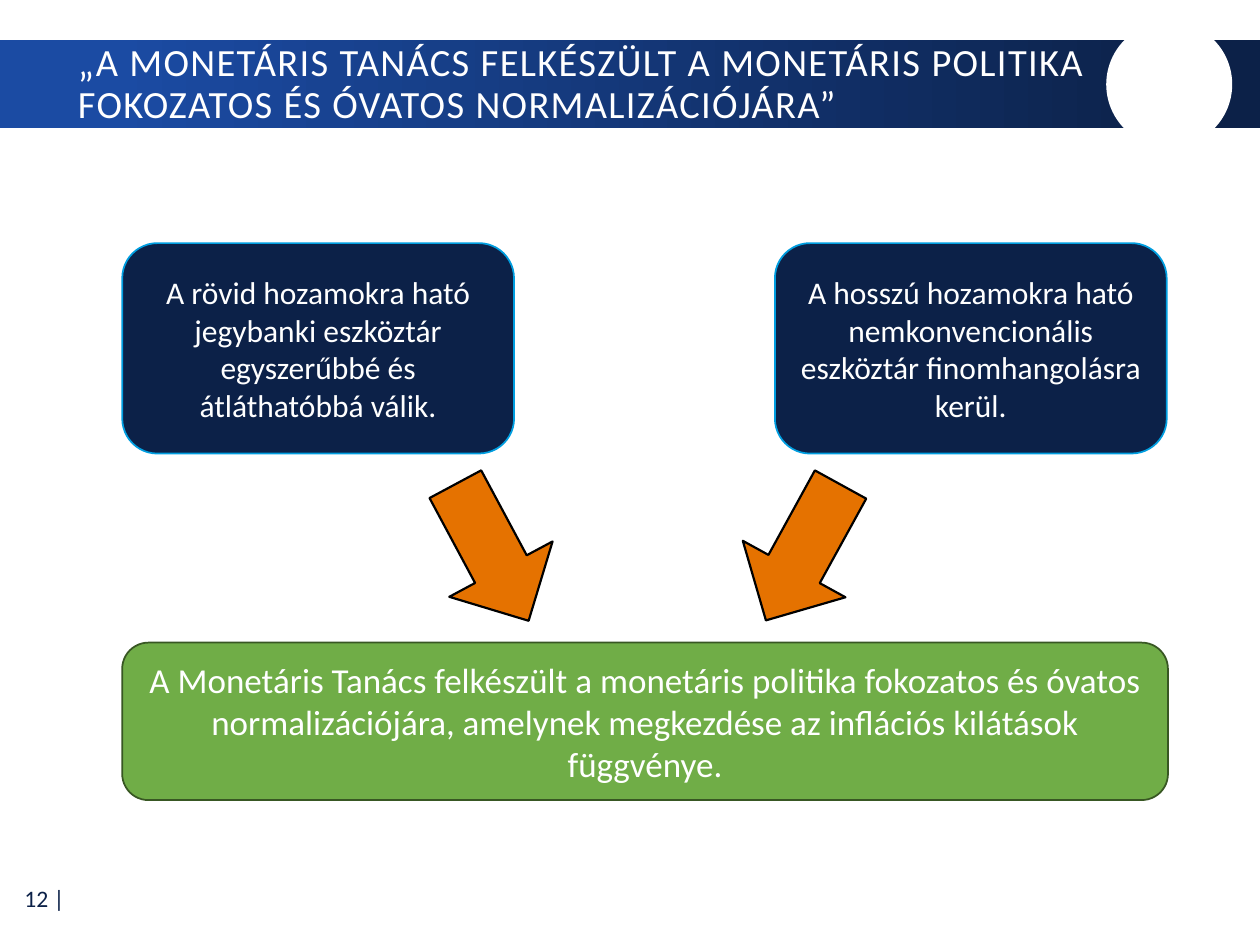
from dataclasses import dataclass

from pptx import Presentation
from pptx.dml.color import RGBColor
from pptx.enum.shapes import MSO_SHAPE
from pptx.enum.text import MSO_ANCHOR, PP_ALIGN
from pptx.util import Inches, Pt


@dataclass(frozen=True)
class Theme:
    font: str = "Calibri"
    white: str = "FFFFFF"
    navy: str = "0C2148"
    blue: str = "1B4BA3"
    cyan: str = "009EE0"
    green: str = "70AD47"
    dark_green: str = "385723"
    orange: str = "E57200"
    black: str = "000000"
    title_size: float = 22
    tool_size: float = 18
    conclusion_size: float = 20
    number_size: float = 13.5


THEME = Theme()

TOOLS = [
    (0.97, "A rövid hozamokra ható jegybanki eszköztár egyszerűbbé és átláthatóbbá válik."),
    (6.15, "A hosszú hozamokra ható nemkonvencionális eszköztár finomhangolásra kerül."),
]
ARROWS = [(3.44, 331.8), (5.91, 28.8)]  # left edge, rotation


def rgb(value):
    return RGBColor.from_string(value)


def set_all(target, values):
    for name, value in values.items():
        setattr(target, name, value)


def write_text(shape, text, size, color, align=PP_ALIGN.LEFT, line_spacing=None):
    frame = shape.text_frame
    set_all(frame, {"word_wrap": True, "vertical_anchor": MSO_ANCHOR.MIDDLE})
    para = frame.paragraphs[0]
    set_all(para, {"alignment": align, "line_spacing": line_spacing})
    span = para.add_run()
    span.text = text
    set_all(span.font, {"name": THEME.font, "size": Pt(size)})
    span.font.color.rgb = rgb(color)
    return span


def add_text(page, place, *args, **formats):
    box = page.shapes.add_textbox(*map(Inches, place))
    return write_text(box, *args, **formats)


def add_shape(page, kind, place, fill=None, line=None, width=1):
    shape = page.shapes.add_shape(kind, *map(Inches, place))
    shape.shadow.inherit = False
    if fill:
        shape.fill.solid()
        shape.fill.fore_color.rgb = rgb(fill)
    if line:
        shape.line.color.rgb = rgb(line)
        shape.line.width = Pt(width)
    else:
        shape.line.fill.background()
    return shape


def add_panel(page, place, text, size, fill, line):
    panel = add_shape(page, MSO_SHAPE.ROUNDED_RECTANGLE, place, fill, line)
    write_text(panel, text, size, THEME.white, PP_ALIGN.CENTER)


def add_header(page):
    band = add_shape(page, MSO_SHAPE.RECTANGLE, (0, 0.32, 10, 0.7))
    band.fill.gradient()
    band.fill.gradient_angle = 0
    stops = [(0.09, THEME.blue), (0.95, THEME.navy)]
    for stop, (position, color) in zip(band.fill.gradient_stops, stops):
        stop.position = position
        stop.color.rgb = rgb(color)
    add_shape(page, MSO_SHAPE.OVAL, (8.78, 0.17, 1, 1), THEME.white)

    title = add_text(
        page, (0.52, 0.34, 8.32, 0.67),
        "„A MONETÁRIS TANÁCS FELKÉSZÜLT A MONETÁRIS POLITIKA "
        "FOKOZATOS ÉS ÓVATOS NORMALIZÁCIÓJÁRA”",
        THEME.title_size, THEME.white, line_spacing=0.9,
    )
    title.font._element.set("spc", "80")  # letter spacing of 0.8 pt


def main():
    deck = Presentation()
    set_all(deck, {"slide_width": Inches(10), "slide_height": Inches(7.5)})
    page = deck.slides.add_slide(deck.slide_layouts[6])

    # Page number and title band
    add_text(page, (0.01, 6.94, 0.6, 0.37), "12 |",
             THEME.number_size, THEME.navy, align=PP_ALIGN.RIGHT)
    add_header(page)

    # Two policy tools
    for left, text in TOOLS:
        add_panel(page, (left, 1.93, 3.11, 1.67), text,
                  THEME.tool_size, THEME.navy, THEME.cyan)

    # Shared conclusion
    add_panel(
        page, (0.97, 5.1, 8.3, 1.25),
        "A Monetáris Tanács felkészült a monetáris politika fokozatos és óvatos "
        "normalizációjára, amelynek megkezdése az inflációs kilátások függvénye.",
        THEME.conclusion_size, THEME.green, THEME.dark_green,
    )

    # Arrows from the tools to the conclusion
    for left, rotation in ARROWS:
        arrow = add_shape(page, MSO_SHAPE.DOWN_ARROW, (left, 3.77, 0.93, 1.23),
                          THEME.orange, THEME.black, 1.25)
        arrow.rotation = rotation

    deck.save("out.pptx")


if __name__ == "__main__":
    main()
